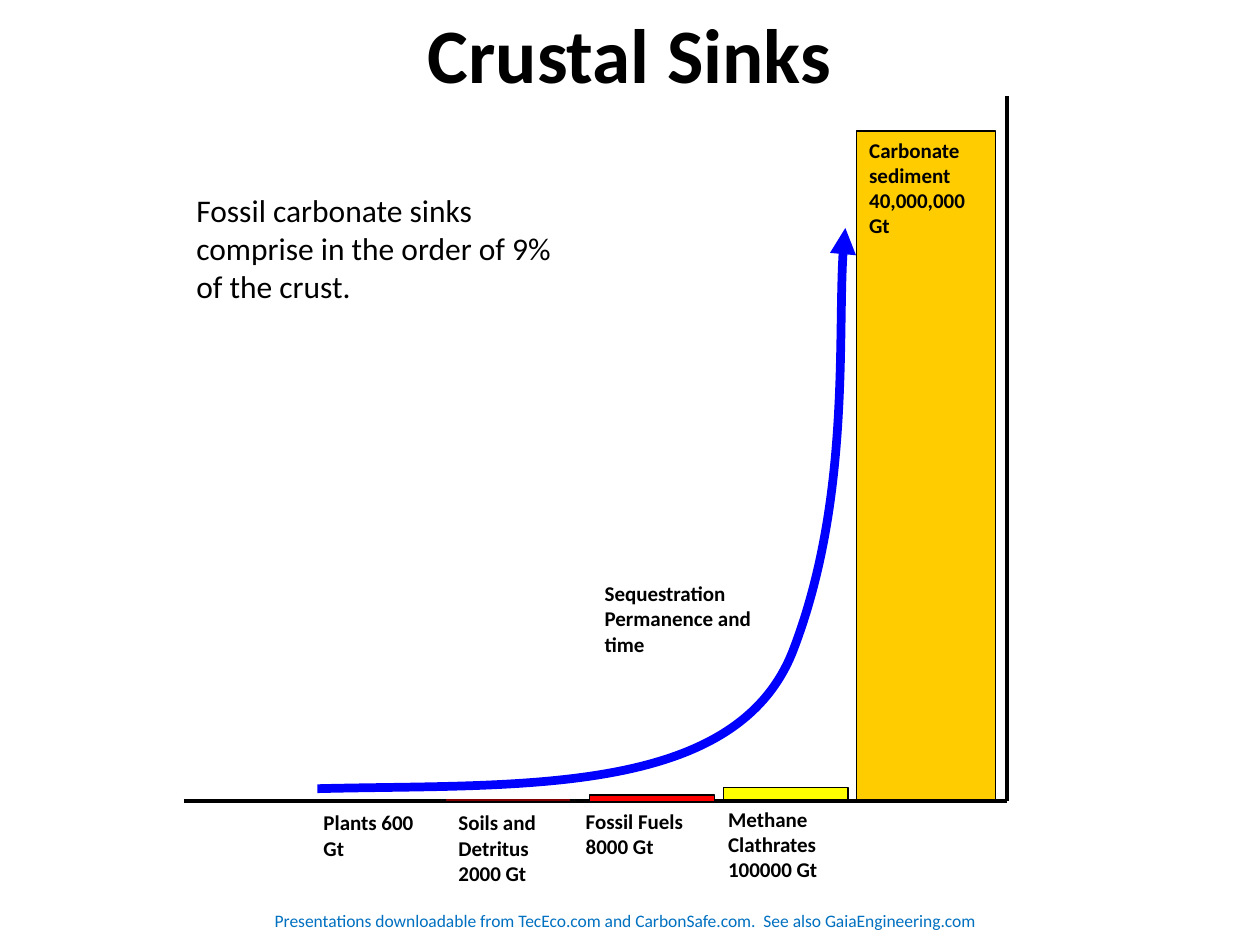
from lxml.etree import SubElement
from pptx import Presentation
from pptx.dml.color import RGBColor
from pptx.enum.shapes import MSO_CONNECTOR, MSO_SHAPE
from pptx.enum.text import MSO_ANCHOR, MSO_AUTO_SIZE, PP_ALIGN
from pptx.oxml.ns import qn
from pptx.util import Pt


def color(hex_code):
    """Turn a hex string into a colour."""
    return RGBColor.from_string(hex_code)


def write(shape, text, size, ink="000000", bold=False, align=PP_ALIGN.LEFT,
          anchor=MSO_ANCHOR.TOP):
    """Fill a shape with formatted, wrapping text."""
    frame = shape.text_frame
    frame.text = text
    frame.word_wrap = True
    frame.auto_size = MSO_AUTO_SIZE.NONE
    frame.vertical_anchor = anchor
    for paragraph in frame.paragraphs:
        paragraph.alignment = align
        for run in paragraph.runs:
            run.font.name = "Calibri"
            run.font.size = Pt(size)
            run.font.bold = bold
            run.font.color.rgb = color(ink)


def add_label(slide, box, text, size=12, bold=True, **style):
    """Place a text box."""
    label = slide.shapes.add_textbox(*map(Pt, box))
    write(label, text, size, bold=bold, **style)


def add_rule(slide, start, end, ink, weight):
    """Draw a straight line without shadow."""
    rule = slide.shapes.add_connector(
        MSO_CONNECTOR.STRAIGHT, *map(Pt, start + end))
    rule.line.color.rgb = color(ink)
    rule.line.width = Pt(weight)
    SubElement(rule._element.spPr, qn("a:effectLst"))


def add_bar(slide, box, fill):
    """Draw one bar with a thin black outline."""
    bar = slide.shapes.add_shape(MSO_SHAPE.RECTANGLE, *map(Pt, box))
    bar.shadow.inherit = False
    bar.fill.solid()
    bar.fill.fore_color.rgb = color(fill)
    bar.line.color.rgb = color("000000")
    bar.line.width = Pt(0.75)
    return bar


def add_curved_arrow(slide, points, ink, weight):
    """Draw a chain of cubic curves that ends in an arrowhead."""
    start, *controls = [(Pt(x), Pt(y)) for x, y in points]
    builder = slide.shapes.build_freeform(*start, scale=1.0)
    builder.add_line_segments(controls, close=False)
    arrow = builder.convert_to_shape()
    arrow.shadow.inherit = False
    arrow.fill.background()
    arrow.line.color.rgb = color(ink)
    arrow.line.width = Pt(weight)
    outline = next(arrow._element.iter(qn("a:path")))
    segments = outline.findall(qn("a:lnTo"))
    for first in range(0, len(segments), 3):
        curve = SubElement(outline, qn("a:cubicBezTo"))
        for segment in segments[first:first + 3]:
            curve.append(segment[0])
            outline.remove(segment)
    SubElement(arrow.line._get_or_add_ln(), qn("a:tailEnd"), type="triangle")


def add_title(slide, box):
    """Place the slide title."""
    title = slide.shapes.title
    title.left, title.top, title.width, title.height = map(Pt, box)
    write(title, "Crustal Sinks", 44, bold=True, align=PP_ALIGN.CENTER,
          anchor=MSO_ANCHOR.MIDDLE)


def add_sinks_chart(slide, box):
    """Draw the schematic of carbon sinks, its axes and the permanence arrow."""
    left, top, width, height = box
    right, base = left + width, top + height
    add_rule(slide, (left, base), (right, base), "000000", 2.25)
    add_rule(slide, (right, base), (right, top), "000000", 2.25)

    floor = base - 0.7
    carbonate = add_bar(
        slide, (left + 384.5, floor - 382.3, 79.2, 382.3), "FFCC00")
    write(carbonate, "Carbonate sediment\n40,000,000 Gt", 12, bold=True)
    add_bar(slide, (left + 231.9, base - 3.6, 71.3, 3.6), "FF0000")
    add_rule(slide, (left + 149.8, floor), (left + 220.4, floor), "800000", 0.75)

    permanence = [(76.3, 396), (190.1, 393.1), (316.1, 401.8), (348.5, 316.1),
                  (380.9, 231.1), (372.3, 118.1), (378, 75.6)]
    add_curved_arrow(
        slide, [(left + x, top + y) for x, y in permanence], "0000FF", 5)
    add_bar(slide, (left + 308.2, floor - 7.2, 71.3, 7.2), "FFFF00")

    sinks = [
        ("Plants 600 Gt", 72.7, 1.4, 77),
        ("Soils and Detritus 2000 Gt", 149.8, 1.4, 67),
        ("Fossil Fuels 8000 Gt", 222.5, 0.7, 72.7),
        ("Methane Clathrates\n100000 Gt", 303.9, -0.7, 76.3),
    ]
    for name, offset, drop, span in sinks:
        add_label(slide, (left + offset, base + drop, span, 56), name)
    add_label(slide, (left + 233.3, top + 273.6, 111.6, 85.7),
              "Sequestration Permanence and time")
    add_label(slide, (left, top + 51.1, 235.4, 72.7),
              "Fossil carbonate sinks comprise in the order of 9% of the crust.",
              size=18, bold=False)


def add_footer(slide, box):
    """Place the download note."""
    add_label(slide, box,
              "Presentations downloadable from TecEco.com and CarbonSafe.com.  "
              "See also GaiaEngineering.com",
              size=10, bold=False, ink="0070C0", align=PP_ALIGN.CENTER,
              anchor=MSO_ANCHOR.MIDDLE)


def main():
    """Build and save the slide."""
    deck = Presentation()
    deck.slide_width, deck.slide_height = Pt(720), Pt(540)
    slide = deck.slides.add_slide(deck.slide_layouts[5])
    add_title(slide, (31, 0, 657.4, 60.5))
    add_footer(slide, (133.2, 515.5, 447.8, 20.9))
    add_sinks_chart(slide, (105.1, 54.7, 470.2, 403.2))
    deck.save("out.pptx")


if __name__ == "__main__":
    main()
